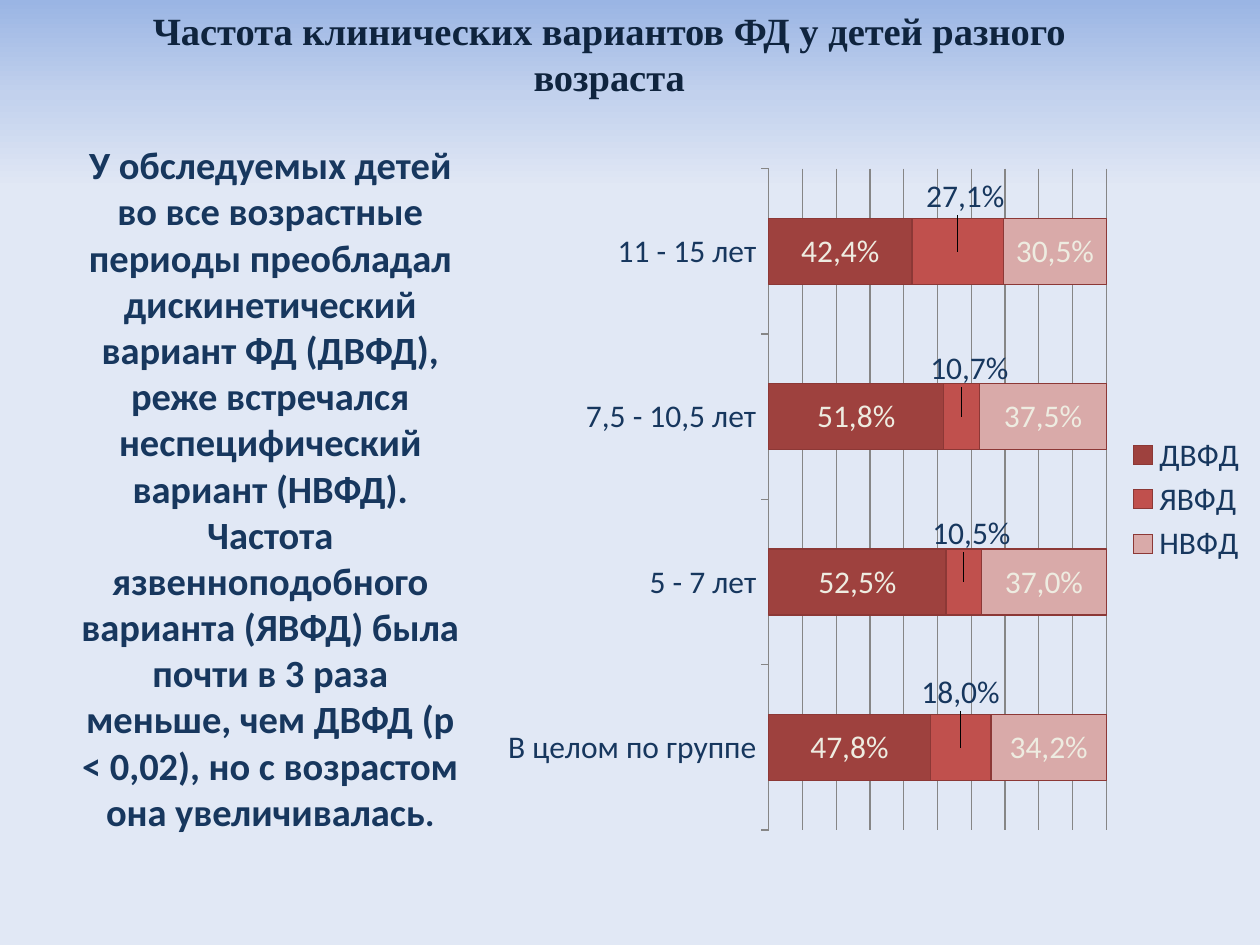
import pptx
import pptx.chart.data
import pptx.dml.color
import pptx.enum.chart
import pptx.enum.text
import pptx.oxml
import pptx.oxml.ns
import pptx.util

RGB = pptx.dml.color.RGBColor
Pt = pptx.util.Pt
INK = RGB(0x0F, 0x24, 0x3E)
NAVY = RGB(0x17, 0x37, 0x5E)
CREAM = RGB(0xEE, 0xEC, 0xE1)
GRID = RGB(0x86, 0x86, 0x86)
EDGE = RGB(0x8C, 0x38, 0x36)
DARK_RED = RGB(0x9E, 0x41, 0x3E)
RED = RGB(0xC0, 0x50, 0x4D)
PINK = RGB(0xD9, 0xAA, 0xA9)
SKY = RGB(0x9A, 0xB5, 0xE4)
HAZE = RGB(0xC2, 0xD1, 0xED)
MIST = RGB(0xE1, 0xE8, 0xF5)

TITLE = "Частота клинических вариантов ФД у детей разного возраста"
BODY = (
    "У обследуемых детей во все возрастные периоды преобладал "
    "дискинетический вариант ФД (ДВФД), реже встречался неспецифический "
    "вариант (НВФД). Частота язвенноподобного варианта (ЯВФД) была почти "
    "в 3 раза меньше, чем ДВФД (р < 0,02), но с возрастом она увеличивалась"
)
AGES = ["В целом по группе", "5 - 7 лет", "7,5 - 10,5 лет", "11 - 15 лет"]
# name, shares, bar colour, label colour, label shifts as shares of the chart
VARIANTS = [
    ("ДВФД", [0.478, 0.525, 0.518, 0.424], DARK_RED, CREAM, None),
    ("ЯВФД", [0.18, 0.105, 0.107, 0.271], RED, NAVY,
     [(0, -0.08), (0.01, -0.07), (0.01, -0.07), (0.01, -0.08)]),
    ("НВФД", [0.342, 0.37, 0.375, 0.305], PINK, CREAM, None),
]


def manual_layout(**values):
    """Return a c:layout element holding the given settings in order."""
    parts = "".join(f'<c:{k} val="{v}"/>' for k, v in values.items())
    ns = pptx.oxml.ns.nsdecls("c")
    return pptx.oxml.parse_xml(
        f"<c:layout {ns}><c:manualLayout>{parts}</c:manualLayout></c:layout>")


class Deck:
    """Style and current slide; boxes are shares of the slide's size."""

    def __init__(self, width=10, height=7.5, font="Calibri"):
        self.prs = pptx.Presentation()
        self.prs.slide_width = pptx.util.Inches(width)
        self.prs.slide_height = pptx.util.Inches(height)
        self.font = font
        self.s = self.prs.slides.add_slide(self.prs.slide_layouts[6])

    def box(self, x, y, w, h):
        sw, sh = self.prs.slide_width, self.prs.slide_height
        return int(x * sw), int(y * sh), int(w * sw), int(h * sh)

    def background(self, stops):
        fill = self.s.background.fill
        fill.gradient()
        grad = self.s.element.xpath(".//p:bgPr/a:gradFill")[0]
        gs = "".join(f'<a:gs pos="{pos * 1000}"><a:srgbClr val="{c}"/></a:gs>'
                     for pos, c in stops)
        ns = pptx.oxml.ns.nsdecls("a")
        new = pptx.oxml.parse_xml(
            f'<a:gradFill {ns} rotWithShape="1"><a:gsLst>{gs}</a:gsLst>'
            '<a:lin ang="5400000" scaled="0"/></a:gradFill>')
        grad.getparent().replace(grad, new)

    def text(self, box, runs, color, font=None, anchor="TOP", before=0):
        sp = self.s.shapes.add_textbox(*self.box(*box))
        tf = sp.text_frame
        tf.word_wrap = True
        tf.vertical_anchor = pptx.enum.text.MSO_ANCHOR[anchor]
        p = tf.paragraphs[0]
        p.alignment = pptx.enum.text.PP_ALIGN.CENTER
        p.space_before = Pt(before)
        p.font.name = font or self.font
        p.font.bold = True
        p.font.color.rgb = color
        for words, size in runs:
            r = p.add_run()
            r.text = words
            r.font.size = Pt(size)
            r.font.name = font or self.font
            r.font.bold = True
            r.font.color.rgb = color

    def style(self, font, color, size=18):
        font.name, font.size = self.font, Pt(size)
        font.color.rgb = color

    def stacked_bars(self, box, cats, series, plot_area):
        enum = pptx.enum.chart
        data = pptx.chart.data.CategoryChartData(number_format="0.0%")
        data.categories = cats
        for name, values, *_ in series:
            data.add_series(name, values)
        chart = self.s.shapes.add_chart(
            enum.XL_CHART_TYPE.BAR_STACKED_100, *self.box(*box), data).chart
        chart.has_title = False
        self.style(chart.font, NAVY)

        # Legend and axes
        chart.has_legend = True
        chart.legend.position = enum.XL_LEGEND_POSITION.RIGHT
        chart.legend.include_in_layout = False
        self.style(chart.legend.font, NAVY)
        cat = chart.category_axis
        cat.major_tick_mark = enum.XL_TICK_MARK.OUTSIDE
        cat.format.line.color.rgb = GRID
        self.style(cat.tick_labels.font, NAVY)
        val = chart.value_axis
        val.visible = False
        val.major_unit = 0.1
        val.maximum_scale = 1
        val.has_major_gridlines = True
        val.major_gridlines.format.line.color.rgb = GRID

        # Bars and their labels
        plot = chart.plots[0]
        plot.gap_width, plot.overlap = 150, 100
        plot.vary_by_categories = False
        sers = chart.element.xpath(".//c:ser")
        for ser, node, spec_row in zip(plot.series, sers, series):
            _, values, color, label_color, shifts = spec_row
            ser.format.fill.solid()
            ser.format.fill.fore_color.rgb = color
            ser.format.line.color.rgb = EDGE
            ser.format.line.width = Pt(0.75)
            ser.data_labels.show_value = True
            self.style(ser.data_labels.font, label_color)
            for i, value in enumerate(values):
                p = ser.points[i].data_label.text_frame.paragraphs[0]
                r = p.add_run()
                r.text = f"{value:.1%}".replace(".", ",")
                self.style(r.font, label_color)
            if shifts:
                for label, (x, y) in zip(node.xpath(".//c:dLbl"), shifts):
                    label.insert(1, manual_layout(x=x, y=y))

        # Inner plot area
        area = chart.element.xpath(".//c:plotArea")[0]
        for old in area.xpath("./c:layout"):
            area.remove(old)
        x, y, w, h = plot_area
        area.insert(0, manual_layout(layoutTarget="inner", xMode="edge",
                                     yMode="edge", x=x, y=y, w=w, h=h))


def main():
    deck = Deck()
    deck.background([(0, SKY), (10, HAZE), (20, MIST), (100, MIST)])
    # Title
    deck.text((0.05, 0.04, 0.867, 0.072), [(TITLE, 22)], INK,
              font="Times New Roman", anchor="BOTTOM")
    # Findings
    deck.text((0.05, 0.143, 0.329, 0.75), [(BODY, 22), (".", 20)], NAVY,
              before=4.4)
    # Shares of each variant by age
    deck.stacked_bars((0.391, 0.164, 0.609, 0.729), AGES, VARIANTS,
                      plot_area=(0.36, 0.02, 0.44, 0.96))
    deck.prs.save("out.pptx")


if __name__ == "__main__":
    main()
